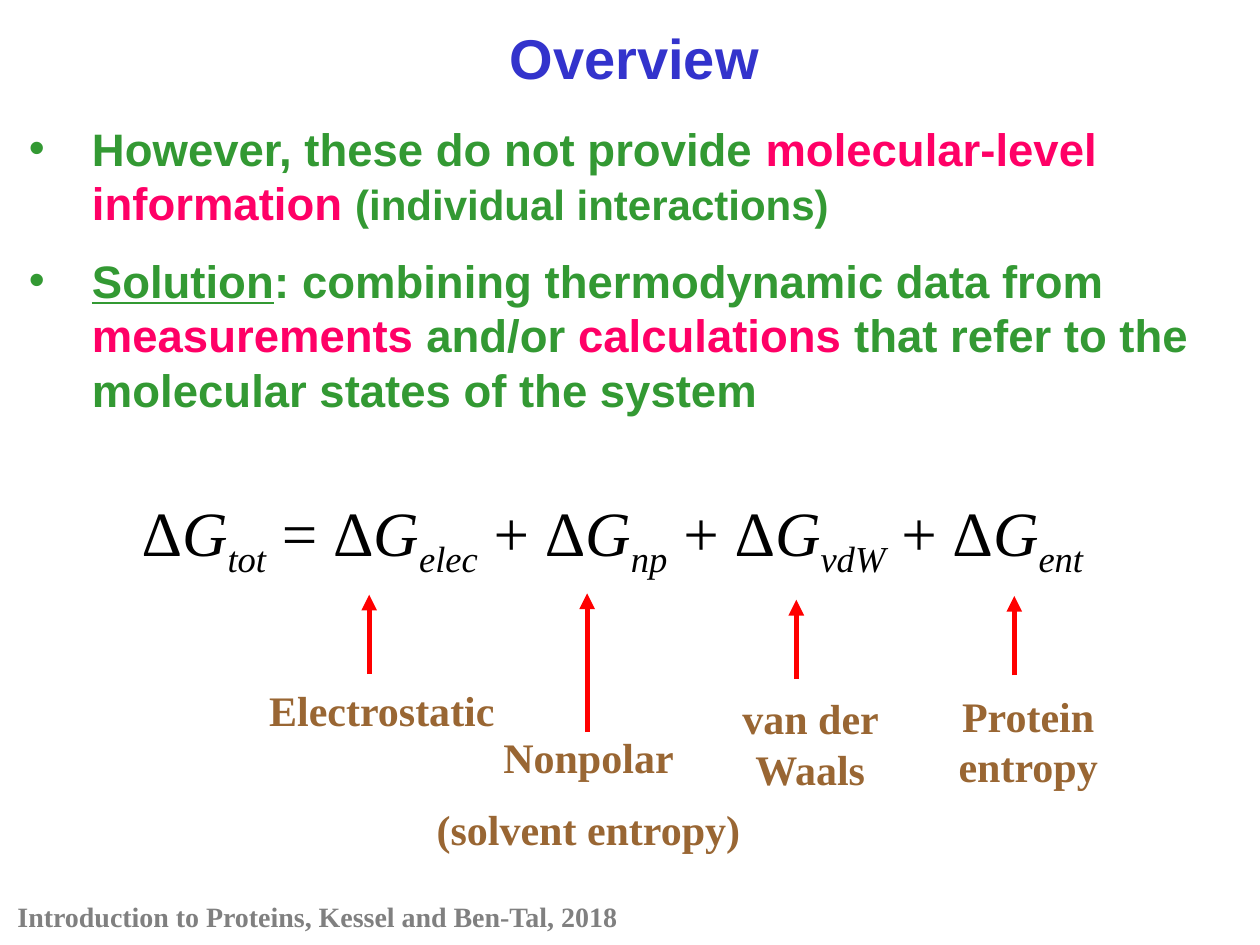
"""Build the overview slide on the free energy terms of a protein."""
from lxml import etree
from pptx import Presentation
from pptx.dml.color import RGBColor
from pptx.enum.shapes import MSO_CONNECTOR
from pptx.enum.text import MSO_ANCHOR, MSO_AUTO_SIZE, PP_ALIGN
from pptx.oxml.ns import qn
from pptx.util import Inches, Pt

LINE = MSO_CONNECTOR.STRAIGHT
TOP = MSO_ANCHOR.TOP
FIT, FIXED = MSO_AUTO_SIZE.SHAPE_TO_FIT_TEXT, MSO_AUTO_SIZE.NONE
LEFT, MID = PP_ALIGN.LEFT, PP_ALIGN.CENTER
BLUE = RGBColor(0x33, 0x33, 0xCC)
GREEN = RGBColor(0x33, 0x99, 0x33)
PINK = RGBColor(0xFF, 0x00, 0x66)
BROWN = RGBColor(0x99, 0x66, 0x33)
GRAY = RGBColor(0x80, 0x80, 0x80)
RED = RGBColor(0xFF, 0x00, 0x00)
BLACK = RGBColor(0x00, 0x00, 0x00)
SANS, SERIF = "Arial", "Times New Roman"
COLS, ROWS = 100, 75


class Deck:
    """Hold the style and the slide, and draw on a grid of columns and rows."""

    def __init__(self):
        self.prs = Presentation()
        self.prs.slide_width, self.prs.slide_height = Inches(10), Inches(7.5)
        self.slide = self.prs.slides.add_slide(self.prs.slide_layouts[1])

    def grid(self, col, row):
        """Turn a column and a row into lengths."""
        return (int(self.prs.slide_width * col / COLS),
                int(self.prs.slide_height * row / ROWS))

    def place(self, shape, box, fit=FIXED):
        """Move a shape to its cells and set up its frame."""
        shape.left, shape.top = self.grid(*box[:2])
        shape.width, shape.height = self.grid(*box[2:])
        frame = shape.text_frame
        frame.word_wrap, frame.auto_size = True, fit
        frame.vertical_anchor = TOP
        return frame

    def para(self, frame, first, align, gap):
        """Give the first or a further paragraph of a frame."""
        par = frame.paragraphs[0] if first else frame.add_paragraph()
        par.alignment = align
        par.space_before = Pt(0 if first else gap)
        return par

    def run(self, par, text, face, size, color, bold=True):
        """Add one styled run and return its font."""
        run = par.add_run()
        run.text = text
        font = run.font
        font.name, font.size, font.bold = face, Pt(size), bold
        font.color.rgb = color
        return font

    def title(self, text, box):
        """Fill the title."""
        frame = self.place(self.slide.shapes.title, box)
        self.run(self.para(frame, True, MID, 0), text, SANS, 32, BLUE)

    def points(self, items, box):
        """Fill the body with bulleted items made of runs."""
        frame = self.place(self.slide.placeholders[1], box)
        for i, item in enumerate(items):
            par = self.para(frame, i == 0, LEFT, 13)
            props = par._p.get_or_add_pPr()
            props.set("marL", str(Inches(0.5)))
            props.set("indent", str(-Inches(0.5)))
            etree.SubElement(props, qn("a:buChar")).set("char", "•")
            for text, color, size, under in item:
                self.run(par, text, SANS, size, color).underline = under

    def label(self, lines, box, size=24, color=BROWN, align=MID):
        """Add a bold serif text box."""
        shape = self.slide.shapes.add_textbox(0, 0, 0, 0)
        frame = self.place(shape, box, FIT)
        for i, text in enumerate(lines):
            par = self.para(frame, i == 0, align, size / 2)
            self.run(par, text, SERIF, size, color)

    def sum(self, total, parts, box):
        """Add the equation with its subscripts."""
        shape = self.slide.shapes.add_textbox(0, 0, 0, 0)
        par = self.para(self.place(shape, box, FIT), True, MID, 0)
        signs = ["", " = "] + [" + "] * (len(parts) - 1)
        for sign, name in zip(signs, [total, *parts]):
            self.run(par, sign + "Δ", SERIF, 36, BLACK, False)
            self.run(par, "G", SERIF, 36, BLACK, False).italic = True
            sub = self.run(par, name, SERIF, 36, BLACK, False)
            sub.italic = True
            sub._element.set("baseline", "-25000")

    def arrow(self, col, low, high):
        """Draw an upright arrow that points up."""
        start, end = self.grid(col, low), self.grid(col, high)
        line = self.slide.shapes.add_connector(LINE, *start, *end)
        line.line.color.rgb, line.line.width = RED, Pt(3)
        tip = etree.SubElement(line.line._get_or_add_ln(), qn("a:tailEnd"))
        tip.set("type", "triangle")
        etree.SubElement(line._element.spPr, qn("a:effectLst"))


def main():
    """Build and save the slide."""
    deck = Deck()
    deck.label(["Introduction to Proteins, Kessel and Ben-Tal, 2018"],
               (0.4, 70.9, 53.2, 3.7), 16, GRAY, LEFT)
    deck.title("Overview", (3.1, 1.4, 94.5, 6.3))
    deck.points([
        [("However, these do not provide ", GREEN, 26, False),
         ("molecular-level information ", PINK, 26, False),
         ("(individual interactions)", GREEN, 24, False)],
        [("Solution", GREEN, 26, True),
         (": combining thermodynamic data from ", GREEN, 26, False),
         ("measurements ", PINK, 26, False),
         ("and/or", GREEN, 26, False),
         (" calculations", PINK, 26, False),
         (" that refer to the molecular states of the system",
          GREEN, 26, False)],
    ], (1.3, 9.1, 98.7, 25.1))
    deck.sum("tot", ["elec", "np", "vdW", "ent"], (8.4, 38.7, 80.4, 7.1))
    terms = [
        ([" Electrostatic"], (19.2, 53.8, 21.4, 5), (29.3, 53.5, 47.2)),
        (["Nonpolar", "(solvent entropy)"], (33.6, 57.6, 26.2, 11.1),
         (46.6, 58.1, 47.1)),
        (["van der Waals"], (53.9, 54.5, 20.8, 9), (63.2, 53.9, 47.6)),
        (["Protein entropy"], (71.2, 54.3, 20.8, 9.1), (80.5, 53.6, 47.3)),
    ]
    for lines, box, arrow in terms:
        deck.label(lines, box)
        deck.arrow(*arrow)
    deck.prs.save("out.pptx")


if __name__ == "__main__":
    main()
